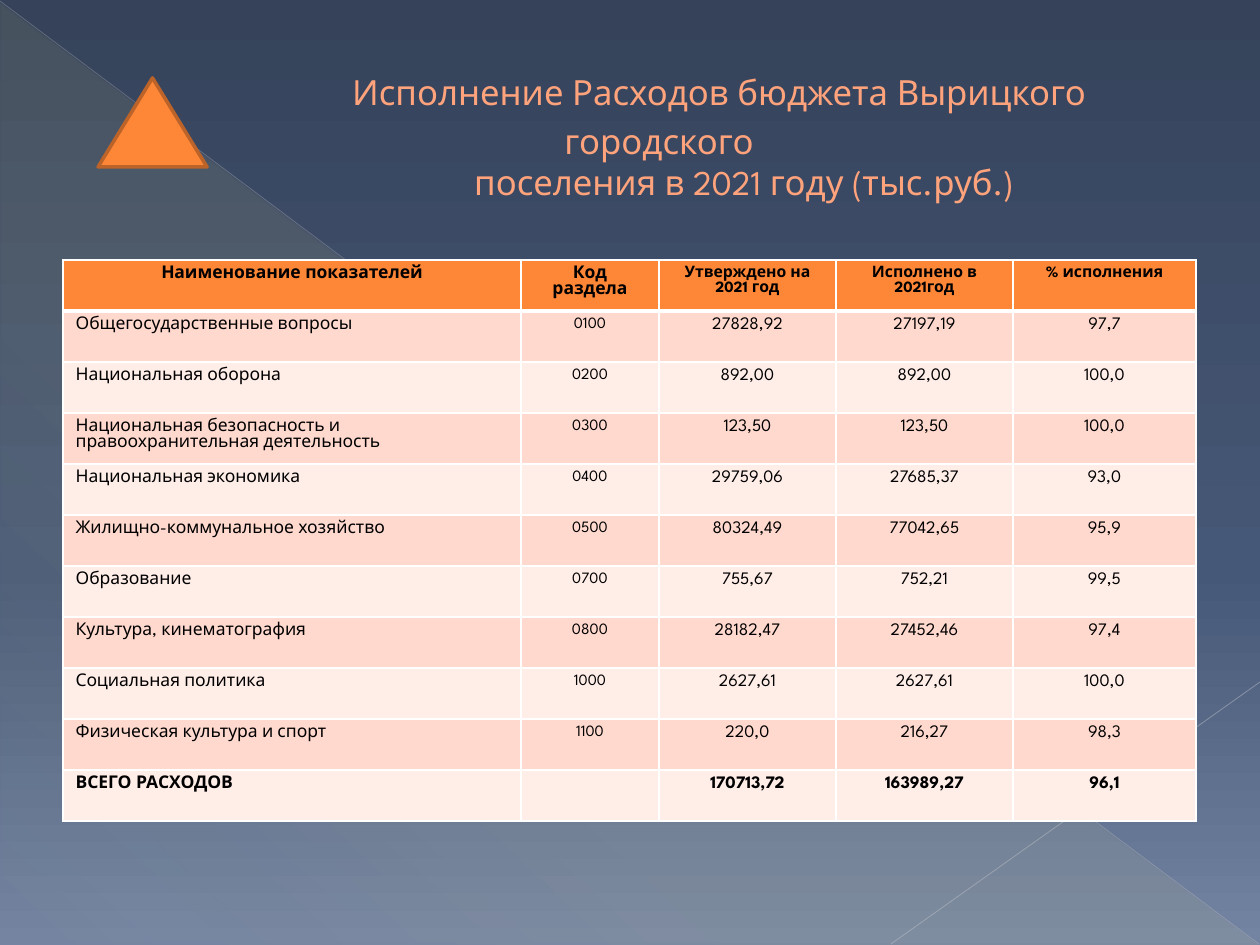
from lxml import etree
from pptx import Presentation
from pptx import util as u
from pptx.dml.color import RGBColor
from pptx.enum import shapes, text
from pptx.oxml import parse_xml
from pptx.oxml.ns import nsdecls, qn

FONT = "League Spartan"
ORANGE = RGBColor(0xFE, 0x86, 0x37)
DARK_ORANGE = RGBColor(0xBC, 0x63, 0x29)
PEACH = RGBColor(0xFF, 0xA3, 0x7C)
ROW_DARK = RGBColor(0xFF, 0xD9, 0xCE)
ROW_LIGHT = RGBColor(0xFF, 0xED, 0xE8)
WHITE = RGBColor(0xFF, 0xFF, 0xFF)
BLACK = RGBColor(0, 0, 0)
NIGHT = RGBColor(0x35, 0x42, 0x5A)
SLATE = RGBColor(0x46, 0x58, 0x77)
MIST = RGBColor(0x73, 0x83, 0xA2)
YELLOW = RGBColor(0xFF, 0xF3, 0x9D)
GREY = RGBColor(0xBA, 0xBD, 0xC4)
PALE_GREY = RGBColor(0xC1, 0xC4, 0xCA)

# Each title line with its left indent in px
TITLE = [
    ("Исполнение Расходов бюджета Вырицкого", 178),
    ("городского", 58),
    ("поселения в 2021 году (тыс.руб.)", 228),
]
COLUMNS = [458, 138, 177, 177, 183]
ROW_HEIGHT = 51
ROWS = [
    ("Наименование показателей", "Код раздела", "Утверждено на 2021 год",
     "Исполнено в 2021год", "% исполнения"),
    ("Общегосударственные вопросы", "0100", "27828,92", "27197,19", "97,7"),
    ("Национальная оборона", "0200", "892,00", "892,00", "100,0"),
    ("Национальная безопасность и правоохранительная деятельность", "0300",
     "123,50", "123,50", "100,0"),
    ("Национальная экономика", "0400", "29759,06", "27685,37", "93,0"),
    ("Жилищно-коммунальное хозяйство", "0500", "80324,49", "77042,65", "95,9"),
    ("Образование", "0700", "755,67", "752,21", "99,5"),
    ("Культура, кинематография", "0800", "28182,47", "27452,46", "97,4"),
    ("Социальная политика", "1000", "2627,61", "2627,61", "100,0"),
    ("Физическая культура и спорт", "1100", "220,0", "216,27", "98,3"),
    ("ВСЕГО РАСХОДОВ", "", "170713,72", "163989,27", "96,1"),
]


def px(length):
    return u.Emu(round(length * 914400 / 126))


def gradient(stops, angle):
    """Return a gradFill; each stop is (position %, colour, opacity %)."""
    marks = "".join(
        f'<a:gs pos="{position * 1000}"><a:srgbClr val="{color}">'
        f'<a:alpha val="{opacity * 1000}"/></a:srgbClr></a:gs>'
        for position, color, opacity in stops)
    return parse_xml(
        f'<a:gradFill {nsdecls("a")} rotWithShape="1"><a:gsLst>{marks}</a:gsLst>'
        f'<a:lin ang="{angle * 60000}" scaled="0"/></a:gradFill>')


def swap_solid_fill(parent, fill):
    parent.replace(parent.find(qn("a:solidFill")), fill)


class Slide:
    def __init__(self, deck, font):
        self.page = deck.slides.add_slide(deck.slide_layouts[5])
        self.font = font

    def background(self, stops, angle):
        fill = self.page.background.fill
        fill.solid()
        fill.fore_color.rgb = stops[0][1]
        properties = next(self.page.element.iter(qn("p:bgPr")))
        swap_solid_fill(properties, gradient(stops, angle))

    def shape(self, kind, left, top, width, height, color, border=None):
        shape = self.page.shapes.add_shape(
            kind, px(left), px(top), px(width), px(height))
        shape.shadow.inherit = False
        shape.fill.solid()
        shape.fill.fore_color.rgb = color
        if border:
            shape.line.color.rgb = border
            shape.line.width = u.Pt(2)
        else:
            shape.line.fill.background()
        return shape

    def line(self, start, end, color, width, opacity):
        line = self.page.shapes.add_connector(
            shapes.MSO_CONNECTOR.STRAIGHT, *map(px, start + end))
        line.line.color.rgb = color
        line.line.width = u.Pt(width)
        properties = line._element.spPr
        alpha = etree.SubElement(next(properties.iter(qn("a:srgbClr"))), qn("a:alpha"))
        alpha.set("val", str(opacity * 1000))
        etree.SubElement(properties, qn("a:effectLst"))

    def style_text(self, para, size, color, bold=False, align=text.PP_ALIGN.CENTER):
        para.alignment = align
        for span in para.runs:
            span.font.name = self.font
            span.font.size = u.Pt(size)
            span.font.bold = bold
            span.font.color.rgb = color

    def title(self, lines, left, top, width, height):
        box = self.page.shapes.title
        box.left, box.top, box.width, box.height = map(px, (left, top, width, height))
        self.page.shapes._spTree.append(box._element)  # in front of the decoration
        frame = box.text_frame
        frame.auto_size = text.MSO_AUTO_SIZE.NONE
        frame.vertical_anchor = text.MSO_ANCHOR.TOP
        frame.margin_top = px(35)
        frame.text = "\n".join(line for line, _ in lines)
        for para, (_, indent) in zip(frame.paragraphs, lines):
            self.style_text(para, 19.8, PEACH)
            para.line_spacing = u.Pt(23.4)
            para.space_before = u.Pt(0)
            para._p.get_or_add_pPr().set("marL", str(px(indent)))
        frame.paragraphs[1].space_before = u.Pt(5)

    def borders(self, cell, widths):
        """Draw white borders; widths in points for left, right, top, bottom."""
        properties = cell._tc.get_or_add_tcPr()
        for side, width in zip("LRTB", widths):
            properties.append(parse_xml(
                f'<a:ln{side} {nsdecls("a")} w="{u.Pt(width)}"><a:solidFill>'
                f'<a:srgbClr val="{WHITE}"/></a:solidFill></a:ln{side}>'))

    def table(self, rows, left, top):
        table = self.page.shapes.add_table(
            len(rows), len(COLUMNS), px(left), px(top),
            px(sum(COLUMNS)), px(ROW_HEIGHT * len(rows))).table
        for column, width in zip(table.columns, COLUMNS):
            column.width = px(width)
        for r, values in enumerate(rows):
            table.rows[r].height = px(ROW_HEIGHT)
            header = r == 0
            fill = ORANGE if header else ROW_DARK if r % 2 else ROW_LIGHT
            for c, value in enumerate(values):
                cell = table.cell(r, c)
                self.borders(cell, (1, 1, 3 if r == 1 else 1, 3 if header else 1))
                cell.fill.solid()
                cell.fill.fore_color.rgb = fill
                if not value:
                    continue
                cell.text_frame.text = value
                small = c > 1 if header else c == 1
                left_aligned = c == 0 and not header
                self.style_text(cell.text_frame.paragraphs[0], 9 if small else 10,
                                BLACK, bold=r in (0, len(rows) - 1),
                                align=text.PP_ALIGN.LEFT if left_aligned
                                else text.PP_ALIGN.CENTER)


def main():
    deck = Presentation()
    deck.slide_width, deck.slide_height = px(1260), px(945)
    slide = Slide(deck, FONT)
    slide.background([(0, NIGHT, 100), (60, SLATE, 100), (100, MIST, 100)], 90)
    corner = slide.shape(shapes.MSO_SHAPE.RIGHT_TRIANGLE, 1, 3, 1258, 942, YELLOW)
    swap_solid_fill(corner._element.spPr, gradient(
        [(0, YELLOW, 10), (70, YELLOW, 8), (100, YELLOW, 1)], 133))
    slide.line((0, 1), (1259, 944), GREY, 0.39, 35)
    slide.line((1260, 682), (891, 944), PALE_GREY, 0.47, 45)
    slide.title(TITLE, 63, 36, 1134, 160)
    slide.table(ROWS, 63, 260)
    slide.shape(shapes.MSO_SHAPE.ISOSCELES_TRIANGLE, 98, 78, 109, 89,
                ORANGE, DARK_ORANGE)
    deck.save("out.pptx")


if __name__ == "__main__":
    main()
